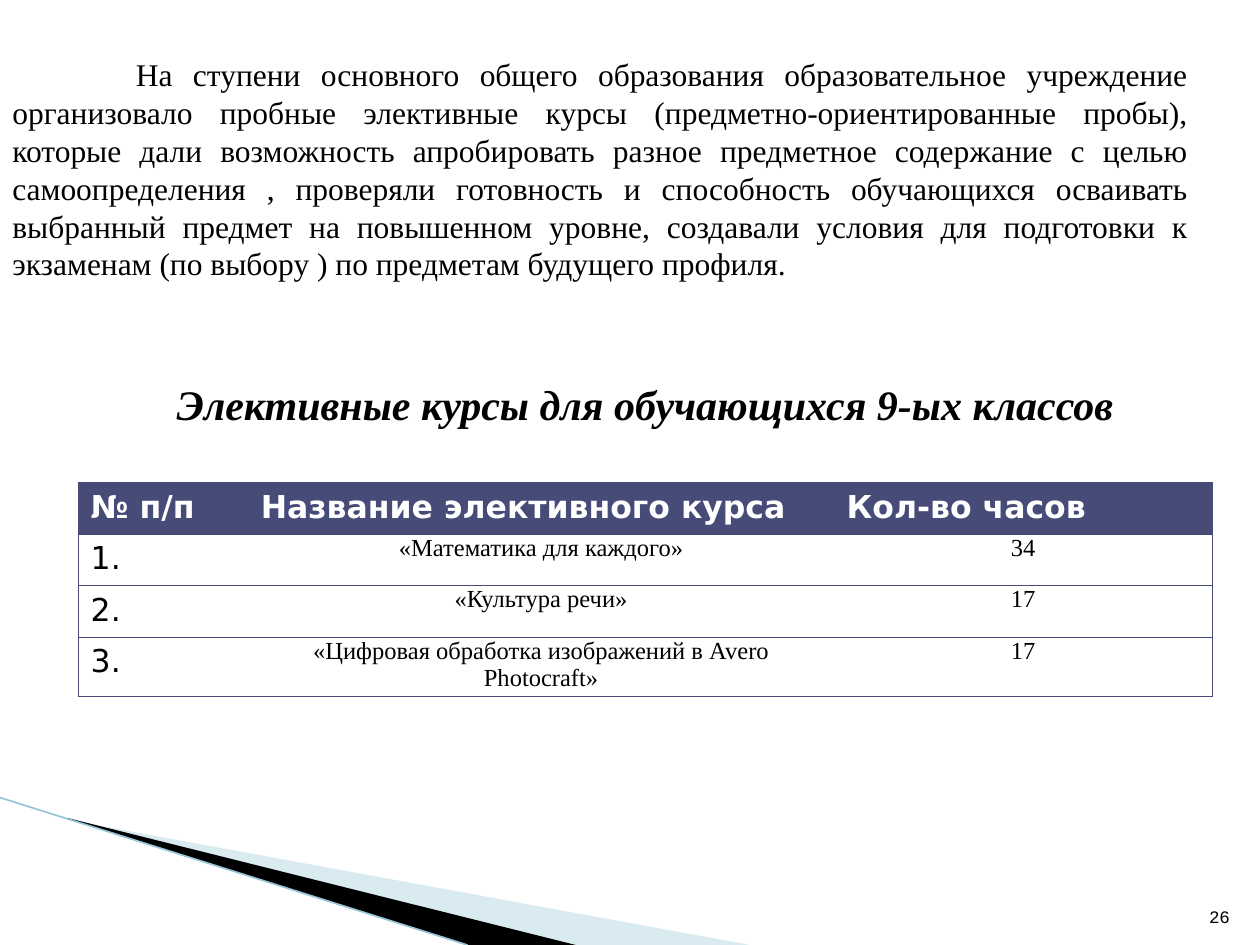
from lxml import etree
from pptx import Presentation, util as u
from pptx.dml.color import RGBColor
from pptx.enum import shapes, text
from pptx.oxml.ns import qn

COLORS = {"ink": "000000", "white": "FFFFFF", "frame": "474B78",
          "pale": "A0CBDC", "edge": "97C5D8"}
SERIF, SANS, MONO = "Times New Roman", "DejaVu Sans", "Courier New"

deck = Presentation()
deck.slide_width, deck.slide_height = u.Inches(10), u.Inches(7.5)
COL, ROW = deck.slide_width / 100, deck.slide_height / 75  # 100 x 75 grid
page = deck.slides.add_slide(deck.slide_layouts[5])


def grid(*lengths):
    """Turn alternating columns and rows of the grid into lengths."""
    return [round(n * (ROW if i % 2 else COL)) for i, n in enumerate(lengths)]


def write(frame, words, size, font, color="ink", align=None, bold=False, italic=False):
    """Write one formatted run into the first paragraph of a frame."""
    para = frame.paragraphs[0]
    para.alignment = align
    span = para.add_run()
    span.text = words
    span.font.size, span.font.name = u.Pt(size), font
    span.font.bold, span.font.italic = bold, italic
    span.font.color.rgb = RGBColor.from_string(COLORS[color])
    return para


# Corner wedges
wedges = [
    ("pale", 40, [(5.5, 65.1), (59.5, 75), (45.6, 75), (5.5, 65)]),
    ("ink", 100, [(5.3, 64.9), (45.7, 75), (37.2, 75), (5.4, 65)]),
]
for color, opacity, points in wedges:
    corners = [grid(*point) for point in points]
    builder = page.shapes.build_freeform(*corners[0])
    builder.add_line_segments(corners[1:])
    wedge = builder.convert_to_shape()
    wedge.shadow.inherit = False
    wedge.line.fill.background()
    wedge.fill.solid()
    wedge.fill.fore_color.rgb = RGBColor.from_string(COLORS[color])
    if opacity < 100:
        tint = wedge.fill._xPr.find(qn("a:solidFill"))[0]
        etree.SubElement(tint, qn("a:alpha"), val=str(opacity * 1000))

# Edge line along the wedges
edge = page.shapes.add_connector(shapes.MSO_CONNECTOR.STRAIGHT, *grid(0, 63.3, 37.1, 75))
edge.line.color.rgb = RGBColor.from_string(COLORS["edge"])
edge.line.width = u.Pt(0.95)
etree.SubElement(edge._element.spPr, qn("a:effectLst"))

# Introduction
intro = page.shapes.add_textbox(*grid(0, 3.9, 95.3, 19.2))
intro.text_frame.word_wrap = True
para = write(
    intro.text_frame,
    "На ступени основного общего образования образовательное учреждение "
    "организовало пробные элективные курсы (предметно-ориентированные пробы), "
    "которые дали возможность апробировать разное предметное содержание с целью "
    "самоопределения , проверяли готовность и способность обучающихся осваивать "
    "выбранный предмет на повышенном уровне, создавали условия для подготовки к "
    "экзаменам (по выбору ) по предметам будущего профиля.",
    18, SERIF, align=text.PP_ALIGN.JUSTIFY)
para._p.get_or_add_pPr().set("indent", str(round(9.8 * COL)))

# Title
title = page.shapes.title
title.left, title.top, title.width, title.height = grid(6.2, 25.8, 90, 12.5)
title.text_frame.vertical_anchor = text.MSO_ANCHOR.MIDDLE
write(title.text_frame, "Элективные курсы для обучающихся 9-ых классов", 24, SERIF,
      align=text.PP_ALIGN.CENTER, bold=True, italic=True)

# Course table
courses = [
    ("№ п/п", "Название элективного курса", "Кол-во часов"),
    ("1.", "«Математика для каждого»", "34"),
    ("2.", "«Культура речи»", "17"),
    ("3.", "«Цифровая обработка изображений в Avero Photocraft»", "17"),
]
table = page.shapes.add_table(len(courses), 3, *grid(6.2, 38.3, 90, 16.4)).table
table.horz_banding = False
NO_STYLE = "{2D5ABB26-0587-4C30-8999-92F81FD0307C}"
table._tbl.tblPr.find(qn("a:tableStyleId")).text = NO_STYLE
for column, share in zip(table.columns, (13.5, 46.5, 30)):
    column.width = round(share * COL)

for r, record in enumerate(courses):
    table.rows[r].height = round(4.1 * ROW)
    for c, words in enumerate(record):
        cell = table.cell(r, c)
        header, detail = r == 0, r > 0 and c > 0
        side, end = (0.07, 0) if detail else (0.1, 0.05)
        cell.margin_left = cell.margin_right = u.Inches(side)
        cell.margin_top = cell.margin_bottom = u.Inches(end)

        # Rules above and below each row, and at the outer sides
        sides = ["lnL"] * (c == 0) + ["lnR"] * (c == 2) + ["lnT", "lnB"]
        for name in sides:
            rule = etree.SubElement(cell._tc.get_or_add_tcPr(), qn("a:" + name),
                                    w=str(u.Pt(0.75)))
            paint = etree.SubElement(rule, qn("a:solidFill"))
            etree.SubElement(paint, qn("a:srgbClr"), val=COLORS["frame"])
        cell.fill.solid()
        cell.fill.fore_color.rgb = RGBColor.from_string(
            COLORS["frame" if header else "white"])

        write(cell.text_frame, words, 14 if detail else 18, SERIF if detail else SANS,
              color="white" if header else "ink", bold=header,
              align=text.PP_ALIGN.CENTER if detail else text.PP_ALIGN.LEFT)

# Page number
number = page.shapes.add_textbox(*grid(94.6, 70.1, 4, 4))
number.text_frame.word_wrap = True
number.text_frame.vertical_anchor = text.MSO_ANCHOR.BOTTOM
write(number.text_frame, "26", 10, MONO, align=text.PP_ALIGN.RIGHT)

deck.save("out.pptx")
